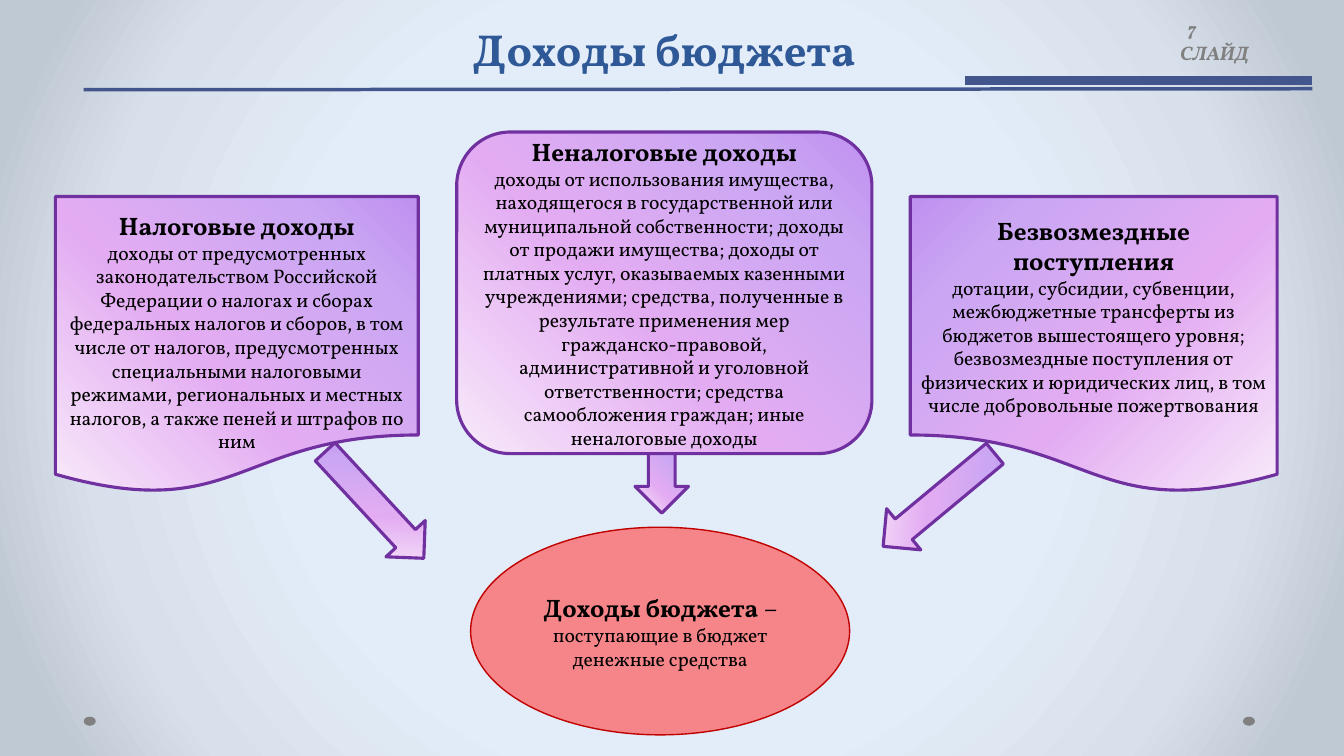
"""Build the slide on budget revenue: three sources flowing into one total."""
from dataclasses import dataclass

from lxml.etree import SubElement
from pptx import Presentation
from pptx.dml.color import RGBColor
from pptx.enum.shapes import MSO_CONNECTOR, MSO_SHAPE
from pptx.enum.text import MSO_ANCHOR, MSO_AUTO_SIZE, PP_ALIGN
from pptx.oxml.ns import qn
from pptx.util import Pt


@dataclass(frozen=True)
class Theme:
    font: str = "Vollkorn"
    title: str = "2F5897"
    rule: str = "42568D"
    muted: str = "808080"
    ink: str = "000000"
    violet: str = "7030A0"
    total_fill: str = "FF5050"
    total_line: str = "C00000"
    card_stops: tuple = ((0, "F8EAFA"), (43, "E3ACF2"), (80, "CBA7F3"), (100, "BE90F0"))
    bg_stops: tuple = ((50, "E3EDF9"), (76, "D8E0EB"), (92, "BFC9D4"))
    title_size: int = 32
    head_size: int = 18
    body_size: int = 14


T = Theme()

TITLE = "Доходы бюджета"
PAGE = "7 СЛАЙД"
TOTAL = (
    ("Доходы бюджета ", T.head_size, True),
    ("– ", T.head_size, False),
    ("поступающие в бюджет денежные средства", T.body_size, False),
)
CARDS = (
    {
        "head": "Налоговые доходы",
        "body": "доходы от предусмотренных законодательством Российской Федерации "
                "о налогах и сборах федеральных налогов и сборов, в том числе от налогов, "
                "предусмотренных специальными налоговыми режимами, региональных и местных "
                "налогов, а также пеней и штрафов по ним",
        "kind": MSO_SHAPE.FLOWCHART_DOCUMENT,
        "box": (39.6, 140.4, 259.2, 212.4), "inset": 26, "flip": False,
    },
    {
        "head": "Безвозмездные поступления",
        "body": "дотации, субсидии, субвенции, межбюджетные трансферты из бюджетов "
                "вышестоящего уровня; безвозмездные поступления от физических и юридических "
                "лиц, в том числе добровольные пожертвования",
        "kind": MSO_SHAPE.FLOWCHART_DOCUMENT,
        "box": (650.2, 140.4, 262.1, 212.4), "inset": 3.6, "flip": True,
    },
    {
        "head": "Неналоговые доходы",
        "body": "доходы от использования имущества, находящегося в государственной или "
                "муниципальной собственности; доходы от продажи имущества; доходы от платных "
                "услуг, оказываемых казенными учреждениями; средства, полученные в результате "
                "применения мер гражданско-правовой, административной и уголовной "
                "ответственности; средства самообложения граждан; иные неналоговые доходы",
        "kind": MSO_SHAPE.ROUNDED_RECTANGLE,
        "box": (326.2, 94.3, 296.6, 229.7), "inset": 3.6, "flip": False,
    },
)
ARROWS = (
    ((453.6, 324, 38.2, 42.5), 0),
    ((248.4, 308.9, 38.2, 103.7), 317.2),
    ((651.6, 305.3, 38.2, 103.7), 50.3),
)
RULES = (
    ((59.8, 64.1, 937.4, 63.4), 2.5),
    ((689, 57.6, 937.4, 57.6), 6),
)
DOTS = (59.8, 887.8)


def pts(values):
    return [Pt(v) for v in values]


def rgb(color):
    return RGBColor.from_string(color)


def style(r, size, color, bold=False, italic=False):
    f = r.font
    f.name, f.size, f.bold, f.italic = T.font, Pt(size), bold, italic
    f.color.rgb = rgb(color)


def gradient(fill, element, stops, angle=None):
    fill.gradient()
    grad = element.find(".//" + qn("a:gradFill"))
    for child in list(grad):
        grad.remove(child)
    grad.set("rotWithShape", "1")
    stop_list = SubElement(grad, qn("a:gsLst"))
    for pos, color in stops:
        stop = SubElement(stop_list, qn("a:gs"), pos=str(pos * 1000))
        SubElement(stop, qn("a:srgbClr"), val=color)
    if angle is None:
        radial = SubElement(grad, qn("a:path"), path="circle")
        SubElement(radial, qn("a:fillToRect"), dict.fromkeys("ltrb", "50000"))
    else:
        SubElement(grad, qn("a:lin"), ang=str(angle * 60000), scaled="0")


def add_shape(s, kind, box):
    sp = s.shapes.add_shape(kind, *pts(box))
    sp.shadow.inherit = False
    return sp


def add_violet(s, kind, box):
    sp = add_shape(s, kind, box)
    gradient(sp.fill, sp.element, T.card_stops, 315)
    sp.line.color.rgb = rgb(T.violet)
    sp.line.width = Pt(2.25)
    return sp


def add_ellipse(s, box, color):
    sp = add_shape(s, MSO_SHAPE.OVAL, box)
    sp.fill.solid()
    sp.fill.fore_color.rgb = rgb(color)
    sp.line.fill.background()
    return sp


def add_text(s, box):
    tf = s.shapes.add_textbox(*pts(box)).text_frame
    tf.word_wrap = True
    return tf


def add_header(s):
    sp = s.shapes.title
    sp.left, sp.top, sp.width, sp.height = pts((42.5, 7.2, 864, 50.4))
    tf = sp.text_frame
    tf.text = TITLE
    tf.auto_size = MSO_AUTO_SIZE.NONE
    tf.vertical_anchor = MSO_ANCHOR.BOTTOM
    p = tf.paragraphs[0]
    p.alignment, p.line_spacing = PP_ALIGN.CENTER, Pt(58)
    style(p.runs[0], T.title_size, T.title, True)
    for ends, width in RULES:
        line = s.shapes.add_connector(MSO_CONNECTOR.STRAIGHT, *pts(ends))
        line.line.color.rgb = rgb(T.rule)
        line.line.width = Pt(width)
        SubElement(line.element.spPr, qn("a:effectLst"))
    p = add_text(s, (835.9, 8.6, 70, 42)).paragraphs[0]
    p.text = PAGE
    p._p.get_or_add_pPr().set("indent", str(Pt(5)))
    style(p.runs[0], T.body_size, T.muted, True, True)


def add_total(s):
    sp = add_ellipse(s, (336.2, 376.6, 270.7, 148.3), T.total_fill)
    SubElement(sp.element.find(".//" + qn("a:srgbClr")), qn("a:alpha"), val="66000")
    sp.line.color.rgb = rgb(T.total_line)
    sp.line.width = Pt(1)
    p = add_text(s, (358.6, 419.8, 226.1, 63.4)).paragraphs[0]
    p.alignment = PP_ALIGN.CENTER
    for text, size, bold in TOTAL:
        r = p.add_run()
        r.text = text
        style(r, size, T.ink, bold)


def add_card(s, card):
    sp = add_violet(s, card["kind"], card["box"])
    if card["flip"]:
        sp.element.spPr.find(qn("a:xfrm")).set("flipH", "1")
    tf = sp.text_frame
    tf.text = card["head"] + "\n" + card["body"]
    tf.word_wrap = True
    tf.vertical_anchor = MSO_ANCHOR.MIDDLE
    tf.margin_top = Pt(card["inset"])
    for p, size, bold in zip(tf.paragraphs, (T.head_size, T.body_size), (True, False)):
        p.alignment = PP_ALIGN.CENTER
        style(p.runs[0], size, T.ink, bold)


def main():
    prs = Presentation()
    prs.slide_width, prs.slide_height = Pt(960), Pt(540)
    s = prs.slides.add_slide(prs.slide_layouts[5])
    gradient(s.background.fill, s.element, T.bg_stops)
    for left in DOTS:
        add_ellipse(s, (left, 511.9, 8.6, 6.5), T.muted)
    add_header(s)
    add_total(s)
    for card in CARDS:
        add_card(s, card)
    for box, turn in ARROWS:
        add_violet(s, MSO_SHAPE.DOWN_ARROW, box).rotation = turn
    prs.save("out.pptx")


if __name__ == "__main__":
    main()
